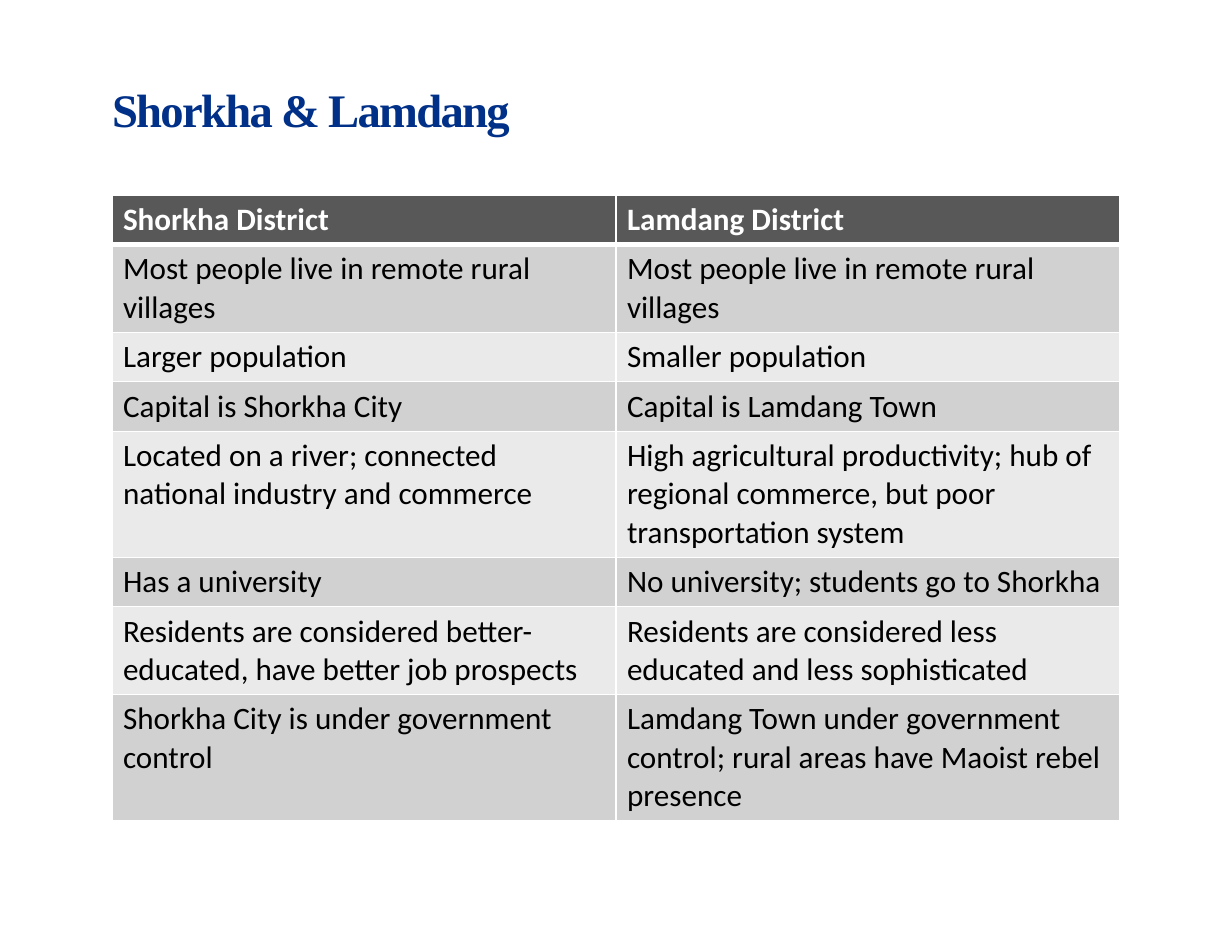
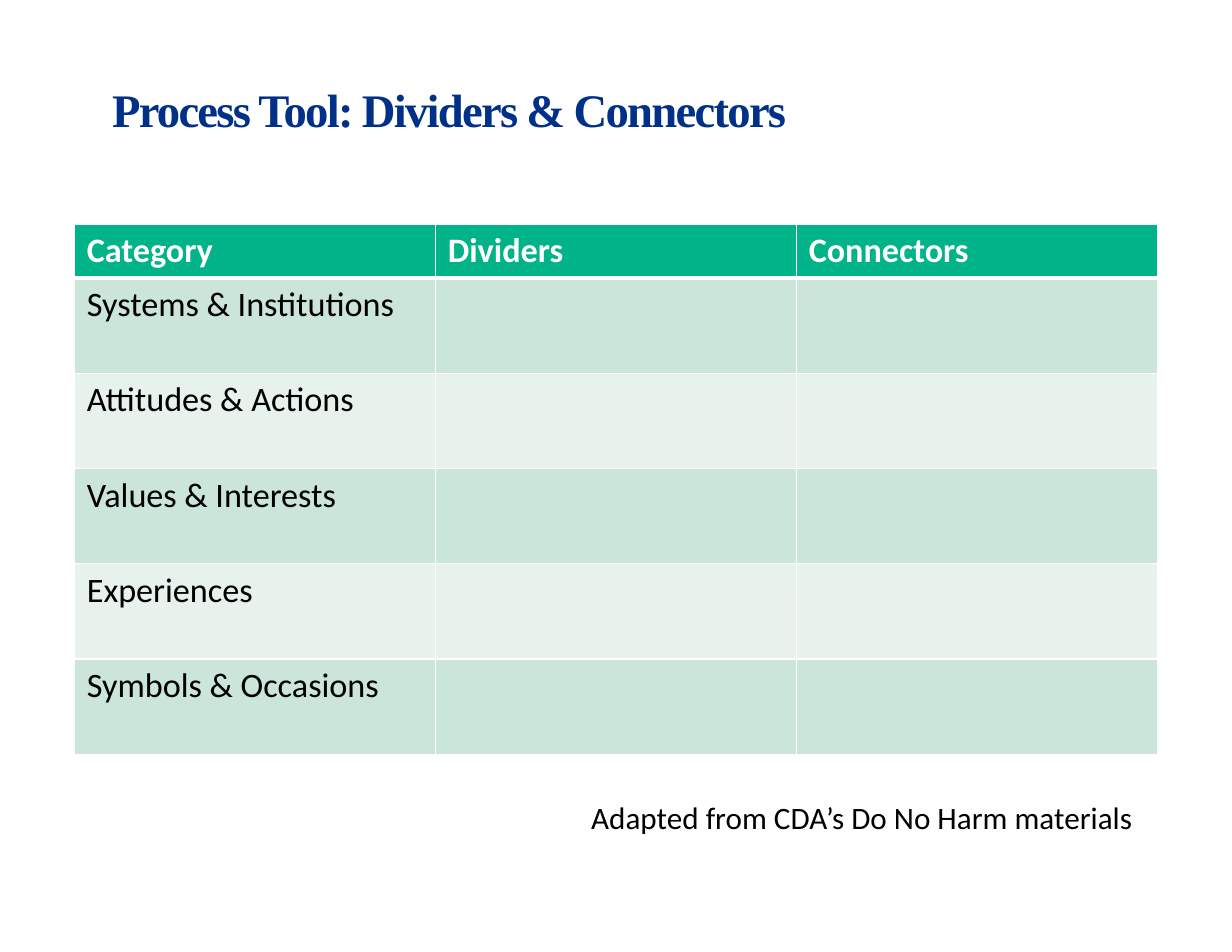
from lxml import etree
from pptx import Presentation
from pptx.dml.color import RGBColor
from pptx.enum import text
from pptx.oxml import ns
from pptx.util import Cm, Pt

TITLE_FONT, BODY_FONT = "Times New Roman", "Calibri"
NAVY, WHITE, BLACK = "003087", "FFFFFF", "000000"
# header fill, odd row fill, even row fill
GREYS = ("585858", "D1D1D1", "EAEAEA")
GREENS = ("00B388", "CCE5DA", "E7F2ED")

DISTRICTS = [
    ("Shorkha District", "Lamdang District"),
    ("Most people live in remote rural villages",
     "Most people live in remote rural villages"),
    ("Larger population", "Smaller population"),
    ("Capital is Shorkha City", "Capital is Lamdang Town"),
    ("Located on a river; connected national industry and commerce",
     "High agricultural productivity; hub of regional commerce, "
     "but poor transportation system"),
    ("Has a university", "No university; students go to Shorkha"),
    ("Residents are considered better-educated, have better job prospects",
     "Residents are considered less educated and less sophisticated"),
    ("Shorkha City is under government control",
     "Lamdang Town under government control; "
     "rural areas have Maoist rebel presence"),
]
CATEGORIES = ["Systems & Institutions", "Attitudes & Actions",
              "Values & Interests", "Experiences", "Symbols & Occasions"]


def rgb(value):
    return RGBColor.from_string(value)


def add_span(para, words, size, color, bold=False, face=BODY_FONT):
    span = para.add_run()
    span.text = words
    span.font.name, span.font.size, span.font.bold = face, Pt(size), bold
    span.font.color.rgb = rgb(color)
    return span


def set_margins(target, left, top, right, bottom):
    target.margin_left, target.margin_top = Cm(left), Cm(top)
    target.margin_right, target.margin_bottom = Cm(right), Cm(bottom)


def add_page(deck, heading):
    """Add a title-only slide with the shared title style."""
    page = deck.slides.add_slide(deck.slide_layouts[5])
    title = page.shapes.title
    title.left, title.top = Cm(2.54), Cm(-0.03)
    title.width, title.height = Cm(20.32), Cm(3.13)
    frame = title.text_frame
    frame.vertical_anchor = text.MSO_ANCHOR.BOTTOM
    set_margins(frame, 0, 0, 0.28, 0)
    para = frame.paragraphs[0]
    para.alignment = text.PP_ALIGN.LEFT
    span = add_span(para, heading, 30, NAVY, True, TITLE_FONT)
    span.font._element.set("spc", "-110")
    return page


def add_borders(cell, top, bottom):
    """Draw white cell edges; top and bottom are widths in points."""
    properties = cell._tc.get_or_add_tcPr()
    for side, width in (("L", 1), ("R", 1), ("T", top), ("B", bottom)):
        line = etree.SubElement(properties, ns.qn(f"a:ln{side}"), w=str(Pt(width)))
        fill = etree.SubElement(line, ns.qn("a:solidFill"))
        etree.SubElement(fill, ns.qn("a:srgbClr"), val=WHITE)


def add_banded_table(page, box, rows, heights, size, fills, margins):
    left, top, width = box
    columns = len(rows[0])
    table = page.shapes.add_table(len(rows), columns, Cm(left), Cm(top),
                                  Cm(width), Cm(sum(heights))).table
    for column in table.columns:
        column.width = Cm(width / columns)
    for r, (words_in_row, height) in enumerate(zip(rows, heights)):
        table.rows[r].height = Cm(height)
        header = r == 0
        shade = fills[0] if header else fills[2 - r % 2]
        for c, words in enumerate(words_in_row):
            cell = table.cell(r, c)
            set_margins(cell, *margins)
            add_borders(cell, 3 if r == 1 else 1, 3 if header else 1)
            cell.fill.solid()
            cell.fill.fore_color.rgb = rgb(shade)
            if words:
                add_span(cell.text_frame.paragraphs[0], words, size,
                         WHITE if header else BLACK, header)


def add_credit(page, box, words):
    frame = page.shapes.add_textbox(*map(Cm, box)).text_frame
    frame.word_wrap = True
    set_margins(frame, 0.25, 0.13, 0.58, 0.13)
    para = frame.paragraphs[0]
    para.alignment = text.PP_ALIGN.RIGHT
    add_span(para, words, 20, BLACK)


def build_districts(deck):
    page = add_page(deck, "Shorkha & Lamdang")
    one, two, three = 1.1, 1.96, 2.8  # heights by lines of text
    add_banded_table(page, (2.54, 4.42, 22.86), DISTRICTS,
                     [one, two, one, one, three, one, two, three],
                     20, GREYS, (0.25, 0.13, 0.25, 0.13))


def build_process_tool(deck):
    page = add_page(deck, "Process Tool: Dividers & Connectors")
    rows = [("Category", "Dividers", "Connectors")]
    rows += [(category, "", "") for category in CATEGORIES]
    add_banded_table(page, (1.69, 5.08, 24.56), rows,
                     [1.21] + [2.16] * len(CATEGORIES),
                     22, GREENS, (0.28, 0.14, 0.28, 0.14))
    add_credit(page, (3.96, 17.98, 22.3, 1.12),
               "Adapted from CDA’s Do No Harm materials")


def main():
    deck = Presentation()
    deck.slide_width, deck.slide_height = Cm(27.94), Cm(21.59)
    build_districts(deck)
    build_process_tool(deck)
    deck.save("out.pptx")


if __name__ == "__main__":
    main()
